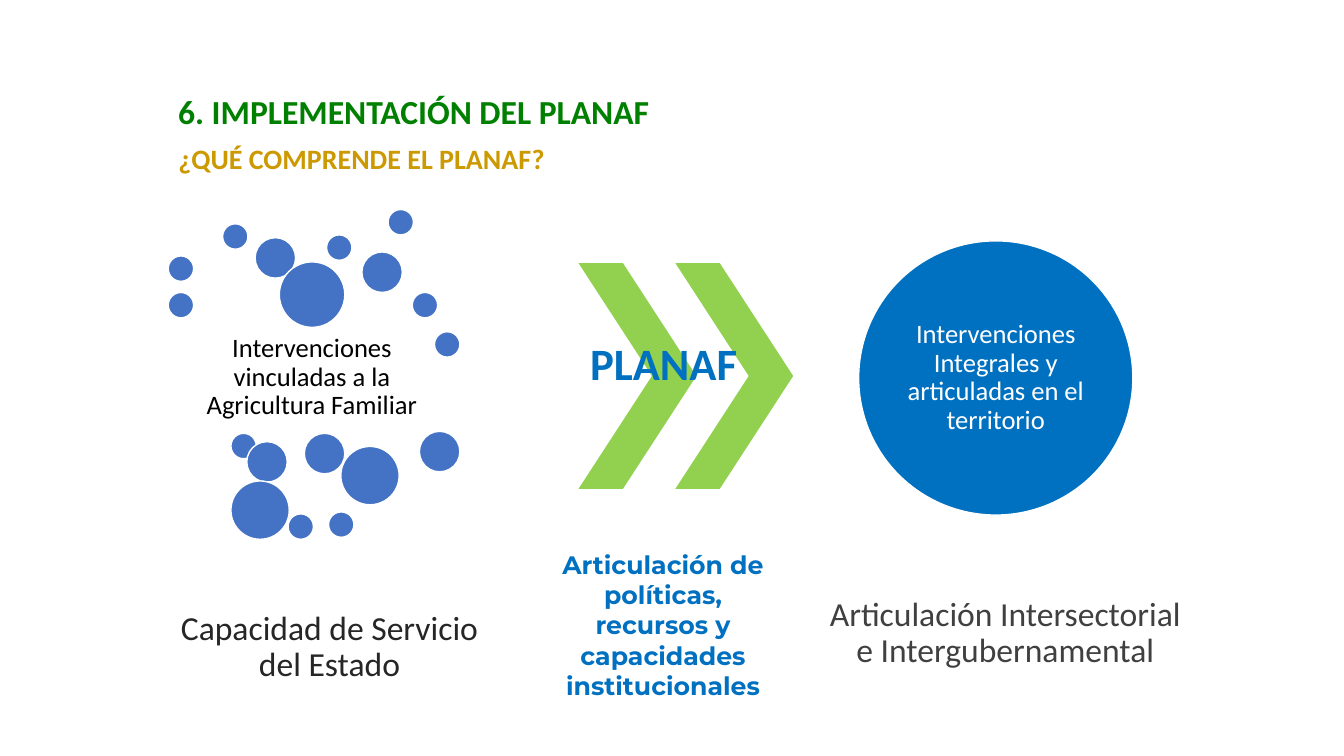
"""Build the slide on what the PLANAF comprises."""
from lxml import etree
from pptx import Presentation
from pptx.dml.color import RGBColor
from pptx.enum.shapes import MSO_SHAPE
from pptx.enum.text import MSO_ANCHOR, MSO_AUTO_SIZE, PP_ALIGN
from pptx.oxml.ns import qn
from pptx.util import Cm, Pt

OVAL, CHEVRON = MSO_SHAPE.OVAL, MSO_SHAPE.CHEVRON
TOP, MIDDLE = MSO_ANCHOR.TOP, MSO_ANCHOR.MIDDLE
LEFT, CENTER = PP_ALIGN.LEFT, PP_ALIGN.CENTER
NO_AUTOFIT = MSO_AUTO_SIZE.NONE

COLORS = {
    "title": "008000", "question": "CC9900", "dot": "4472C4", "chevron": "92D050",
    "blue": "0070C0", "black": "000000", "dark": "262626", "gray": "404040",
    "white": "FFFFFF",
}

TITLE = "6. IMPLEMENTACIÓN DEL PLANAF"
QUESTION = "¿QUÉ COMPRENDE EL PLANAF?"
RESULT = "Intervenciones Integrales y articuladas en el territorio"

CAPTIONS = [
    ("Intervenciones vinculadas a la Agricultura Familiar",
     (5.13, 8.18, 5.46, 2.67), 19, "black"),
    ("Capacidad de Servicio del Estado", (4.24, 13.82, 8.13, 5), 24, "dark"),
    ("Articulación Intersectorial e Intergubernamental",
     (20.8, 13.46, 9.07, 5), 24, "gray"),
]
PLANAF_LABELS = [
    ("PLANAF", (14.53, 8.28, 4.78, 1.7), 32, "Calibri", LEFT),
    ("Articulación de políticas, recursos y capacidades institucionales",
     (13.51, 13.67, 6.4, 4.95), 18, "Montserrat", CENTER),
]

DOTS = {
    0.64: [(4.24, 7.37), (4.24, 6.45), (5.61, 5.64), (9.78, 5.28), (8.23, 5.92),
           (10.39, 7.37), (10.95, 8.36), (5.82, 10.92), (7.26, 12.95), (8.28, 12.9)],
    1.02: [(6.43, 5.99), (9.12, 6.35), (6.22, 11.13), (7.67, 10.92), (10.57, 10.87)],
    1.47: [(5.82, 12.12), (8.59, 11.25)],
    1.65: [(7.04, 6.6)],
}
CHEVRON_LEFTS = (14.58, 17.02)


def color(name):
    return RGBColor.from_string(COLORS[name])


def place(part, box):
    part.left, part.top, part.width, part.height = map(Cm, box)


def write(part, text, size, ink, font="Calibri", bold=False, align=CENTER,
          anchor=MIDDLE, inset=(0.08, 0.08), spacing=0.9):
    frame = part.text_frame
    frame.text = text
    frame.word_wrap = True
    frame.auto_size = NO_AUTOFIT
    frame.vertical_anchor = anchor
    frame.margin_left = frame.margin_right = Cm(inset[0])
    frame.margin_top = frame.margin_bottom = Cm(inset[1])
    paragraph = frame.paragraphs[0]
    paragraph.alignment = align
    paragraph.line_spacing = spacing
    paragraph.space_before = Pt(0)
    paragraph.font.name = font
    paragraph.font.size = Pt(size)
    paragraph.font.bold = bold
    paragraph.font.color.rgb = color(ink)


def add_figure(kind, box, fill, outlined=True):
    figure = slide.shapes.add_shape(kind, *map(Cm, box))
    figure.shadow.inherit = False
    figure.fill.solid()
    figure.fill.fore_color.rgb = color(fill)
    if outlined:
        figure.line.color.rgb = color("white")
        figure.line.width = Pt(1)
    else:
        figure.line.fill.background()
    return figure


presentation = Presentation()
presentation.slide_width, presentation.slide_height = Cm(33.87), Cm(19.05)
slide = presentation.slides.add_slide(presentation.slide_layouts[1])

title, question = slide.placeholders
place(title, (4.24, 2.16, 25, 1.28))
write(title, TITLE, 24, "title", bold=True, align=LEFT, anchor=TOP,
      inset=(0.25, 0.13), spacing=1)

place(question, (4.24, 3.53, 25, 1.45))
question.text_frame.text = QUESTION
question_properties = question.text_frame.paragraphs[0]._p.get_or_add_pPr()
question_properties.set("marL", "0")
question_properties.set("indent", "0")
etree.SubElement(question_properties, qn("a:buNone"))
question_format = question.text_frame.paragraphs[0]
question_format.line_spacing = 0.9
question_format.space_before = Pt(0)
question_format.font.name = "Calibri"
question_format.font.size = Pt(20)
question_format.font.bold = True
question_format.font.color.rgb = color("question")
question.text_frame.auto_size = NO_AUTOFIT

for diameter, corners in DOTS.items():
    for left, top in corners:
        add_figure(OVAL, (left, top, diameter, diameter), "dot")

for left in CHEVRON_LEFTS:
    chevron = add_figure(CHEVRON, (left, 6.63, 2.97, 5.69), "chevron", outlined=False)
    chevron.adjustments[0] = 0.623

result = add_figure(OVAL, (21.64, 6.07, 6.91, 6.91), "blue")
write(result, RESULT, 19, "white", inset=(0, 0))

for text, box, size, ink in CAPTIONS:
    write(slide.shapes.add_textbox(*map(Cm, box)), text, size, ink)

for text, box, size, font, align in PLANAF_LABELS:
    write(slide.shapes.add_textbox(*map(Cm, box)), text, size, "blue", font,
          bold=True, align=align, anchor=TOP, inset=(0.34, 0.17), spacing=1)

presentation.save("out.pptx")
